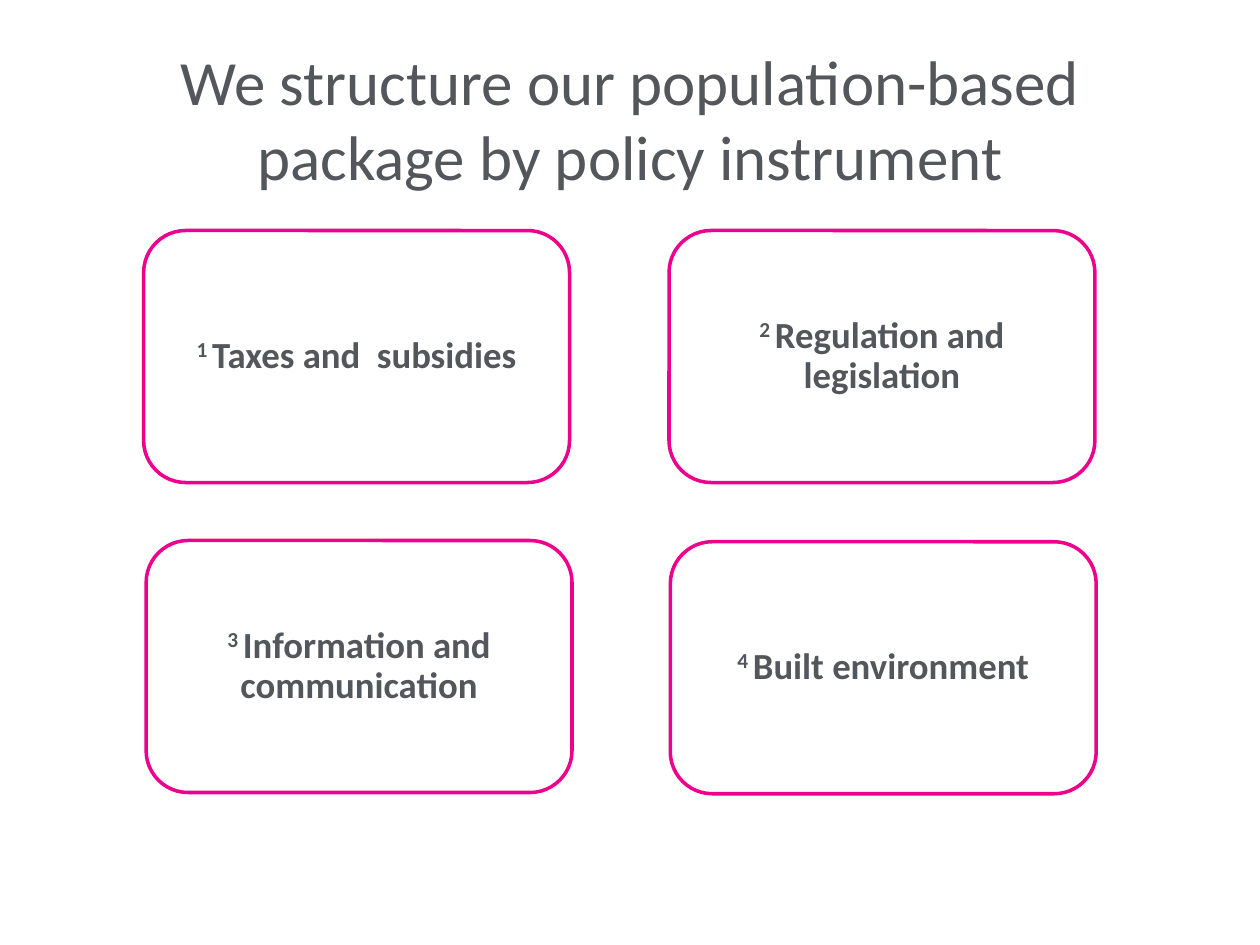
from dataclasses import dataclass

from pptx import Presentation
from pptx.dml.color import RGBColor
from pptx.enum import shapes, text
from pptx.slide import Slide
from pptx.text.text import _Paragraph as Paragraph
from pptx.util import Inches, Pt

FONT = "Calibri"
GREY = "53565A"
PINK = "EC008C"
WHITE = "FFFFFF"
CARD_WIDTH = 3.38
CARD_HEIGHT = 2
CARD_INSET = 0.09


@dataclass
class Instrument:
    left: float
    top: float
    label: str


INSTRUMENTS = [
    Instrument(1.14, 1.83, "Taxes and  subsidies"),
    Instrument(5.31, 1.83, "Regulation and legislation"),
    Instrument(1.16, 4.29, "Information and communication"),
    Instrument(5.32, 4.3, "Built environment"),
]


def color(value: str) -> RGBColor:
    return RGBColor.from_string(value)


def add_span(para: Paragraph, content: str, size: float,
             bold: bool = False, raised: bool = False) -> None:
    span = para.add_run()
    span.text = content
    span.font.name = FONT
    span.font.size = Pt(size)
    span.font.bold = bold
    span.font.color.rgb = color(GREY)
    if raised:
        span._r.get_or_add_rPr().set("baseline", "30000")


def add_title(page: Slide, content: str) -> None:
    title = page.shapes.title
    title.left, title.top = Inches(0.5), Inches(0.17)
    title.width, title.height = Inches(9), Inches(1.53)
    title.text_frame.vertical_anchor = text.MSO_ANCHOR.MIDDLE
    para = title.text_frame.paragraphs[0]
    para.alignment = text.PP_ALIGN.CENTER
    add_span(para, content, 36)


def add_card(page: Slide, number: int, instrument: Instrument) -> None:
    card = page.shapes.add_shape(
        shapes.MSO_SHAPE.ROUNDED_RECTANGLE,
        Inches(instrument.left), Inches(instrument.top),
        Inches(CARD_WIDTH), Inches(CARD_HEIGHT))
    card.shadow.inherit = False
    card.fill.solid()
    card.fill.fore_color.rgb = color(WHITE)
    card.line.color.rgb = color(PINK)
    card.line.width = Pt(2)
    frame = card.text_frame
    frame.word_wrap = True
    frame.vertical_anchor = text.MSO_ANCHOR.MIDDLE
    frame.margin_left = frame.margin_right = Inches(CARD_INSET)
    frame.margin_top = frame.margin_bottom = Inches(CARD_INSET)
    para = frame.paragraphs[0]
    para.alignment = text.PP_ALIGN.CENTER
    para.line_spacing = 0.9
    add_span(para, f"{number} ", 21, bold=True, raised=True)
    add_span(para, instrument.label, 21, bold=True)


def main() -> None:
    deck = Presentation()
    deck.slide_width, deck.slide_height = Inches(10), Inches(7.5)
    page = deck.slides.add_slide(deck.slide_layouts.get_by_name("Title Only"))
    add_title(page, "We structure our population-based package by policy instrument")
    for number, instrument in enumerate(INSTRUMENTS, start=1):
        add_card(page, number, instrument)
    deck.save("out.pptx")


if __name__ == "__main__":
    main()
